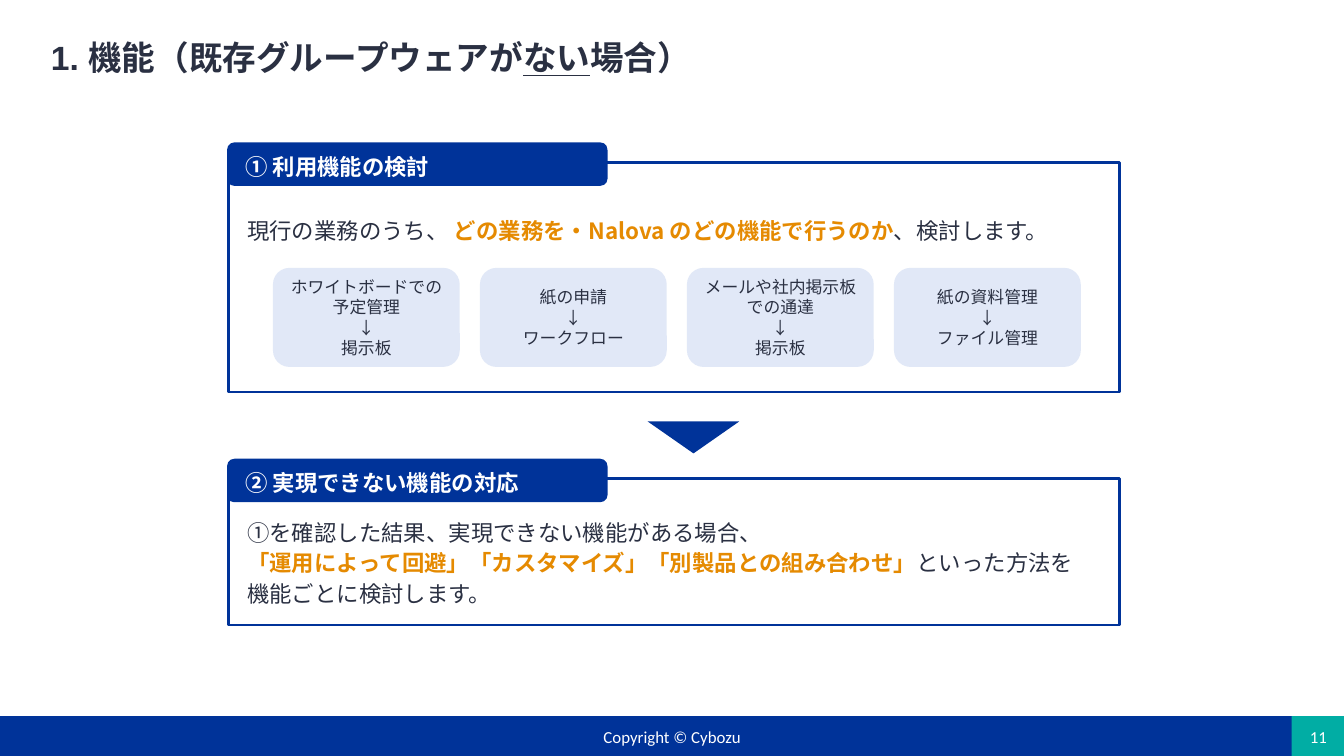
"""Builds the slide on choosing features when no groupware exists yet."""
from lxml import etree
from pptx import Presentation
from pptx.dml.color import RGBColor
from pptx.enum.shapes import MSO_SHAPE
from pptx.enum.text import MSO_ANCHOR, PP_ALIGN
from pptx.oxml.ns import qn
from pptx.util import Pt

RECT, ROUND = MSO_SHAPE.RECTANGLE, MSO_SHAPE.ROUNDED_RECTANGLE
TRIANGLE = MSO_SHAPE.ISOSCELES_TRIANGLE
TOP, MIDDLE = MSO_ANCHOR.TOP, MSO_ANCHOR.MIDDLE
LEFT, CENTER = PP_ALIGN.LEFT, PP_ALIGN.CENTER
BLUE, TEAL, PALE, WHITE = "003399", "01ADA4", "E1E8F7", "FFFFFF"
INK, ORANGE = "2A3042", "E58A01"
SANS = "Noto Sans CJK JP"

prs = Presentation()
prs.slide_width, prs.slide_height = Pt(720), Pt(405)
s = prs.slides.add_slide(prs.slide_layouts[6])


def add_box(kind, x, y, w, h, fill, line=None):
    """Adds a filled preset shape, or a text box when kind is None."""
    if kind is None:
        return s.shapes.add_textbox(Pt(x), Pt(y), Pt(w), Pt(h))
    sp = s.shapes.add_shape(kind, Pt(x), Pt(y), Pt(w), Pt(h))
    sp.shadow.inherit = False
    sp.fill.solid()
    sp.fill.fore_color.rgb = RGBColor.from_string(fill)
    if line:
        sp.line.color.rgb = RGBColor.from_string(line)
        sp.line.width = Pt(1.5)
    else:
        sp.line.fill.background()
    return sp


def write(sp, paragraphs, size, color, font=SANS, bold=False, align=LEFT,
          anchor=MIDDLE, insets=(6.5, 6.5, 6.5, 6.5), spacing=None):
    """Fills a shape with paragraphs, each a string or a list of (text, style)."""
    tf = sp.text_frame
    tf.word_wrap = True
    tf.vertical_anchor = anchor
    tf.margin_left, tf.margin_top, tf.margin_right, tf.margin_bottom = map(Pt, insets)
    for i, runs in enumerate(paragraphs):
        p = tf.add_paragraph() if i else tf.paragraphs[0]
        p.alignment = align
        p.line_spacing = spacing
        p.font.name, p.font.size, p.font.bold = font, Pt(size), bold
        p.font.color.rgb = RGBColor.from_string(color)
        defaults = p._p.pPr.find(qn("a:defRPr"))
        etree.SubElement(defaults, qn("a:ea")).set("typeface", SANS)
        for text, style in [(runs, "")] if isinstance(runs, str) else runs:
            if text == "\n":
                p.add_line_break()
                continue
            r = p.add_run()
            r.text = text
            if style == "underline":
                r.font.underline = True
            elif style == "key":
                r.font.bold = True
                r.font.color.rgb = RGBColor.from_string(ORANGE)


# footer
add_box(RECT, 0, 383.7, 720, 21.3, BLUE)
add_box(RECT, 692, 383.7, 28, 21.3, TEAL)
for text, x, y, w, h in [("Copyright © Cybozu", 238.3, 387.4, 243.4, 14.4),
                         ("11", 690.5, 386, 31.7, 17.3)]:
    write(add_box(None, x, y, w, h, None), [text], 9, WHITE, "Calibri",
          align=CENTER, insets=(5, 2.9, 5, 2.9))

write(add_box(None, 20.2, 15.1, 648, 33.8, None),
      [[("1. 機能（既存グループウェアが", ""), ("ない", "underline"), ("場合）", "")]],
      18, INK, "Arial", True, insets=(7.2, 3.6, 7.2, 3.6), spacing=0.9)

sections = [
    ("① 利用機能の検討", 76.3, 123.1, (126, 100.1, 496, 44.6), MIDDLE,
     [[("現行の業務のうち、 ", ""), ("どの業務を・Nalova のどの機能で行うのか", "key"),
       ("、検討します。", "")]]),
    ("② 実現できない機能の対応", 245.8, 78.5, (126, 269.3, 465.1, 65.5), TOP,
     ["①を確認した結果、実現できない機能がある場合、",
      [("「運用によって回避」「カスタマイズ」「別製品との組み合わせ」", "key"),
       ("といった方法を", ""), ("\n", ""), ("機能ごとに検討します。", "")]]),
]
for heading, tab_y, frame_h, body_area, anchor, body in sections:
    add_box(RECT, 122.4, tab_y + 10.6, 477.5, frame_h, WHITE, BLUE)
    write(add_box(ROUND, 121.7, tab_y, 203.8, 23.3, BLUE), [heading], 12, WHITE,
          bold=True, insets=(8.6, 6.5, 4.3, 4.3))
    write(add_box(None, *body_area, None), body, 12, INK, anchor=anchor,
          spacing=Pt(16.5))

cards = [("ホワイトボードでの予定管理", "掲示板"), ("紙の申請", "ワークフロー"),
         ("メールや社内掲示板での通達", "掲示板"), ("紙の資料管理", "ファイル管理")]
for i, (task, feature) in enumerate(cards):
    write(add_box(ROUND, 146.2 + i * 110.9, 143.5, 100.1, 53.1, PALE),
          [task, "↓", feature], 9, INK, align=CENTER)

sp = add_box(TRIANGLE, 347, 225.8, 49, 17.1, BLUE)
sp.rotation = 180

prs.save("out.pptx")
